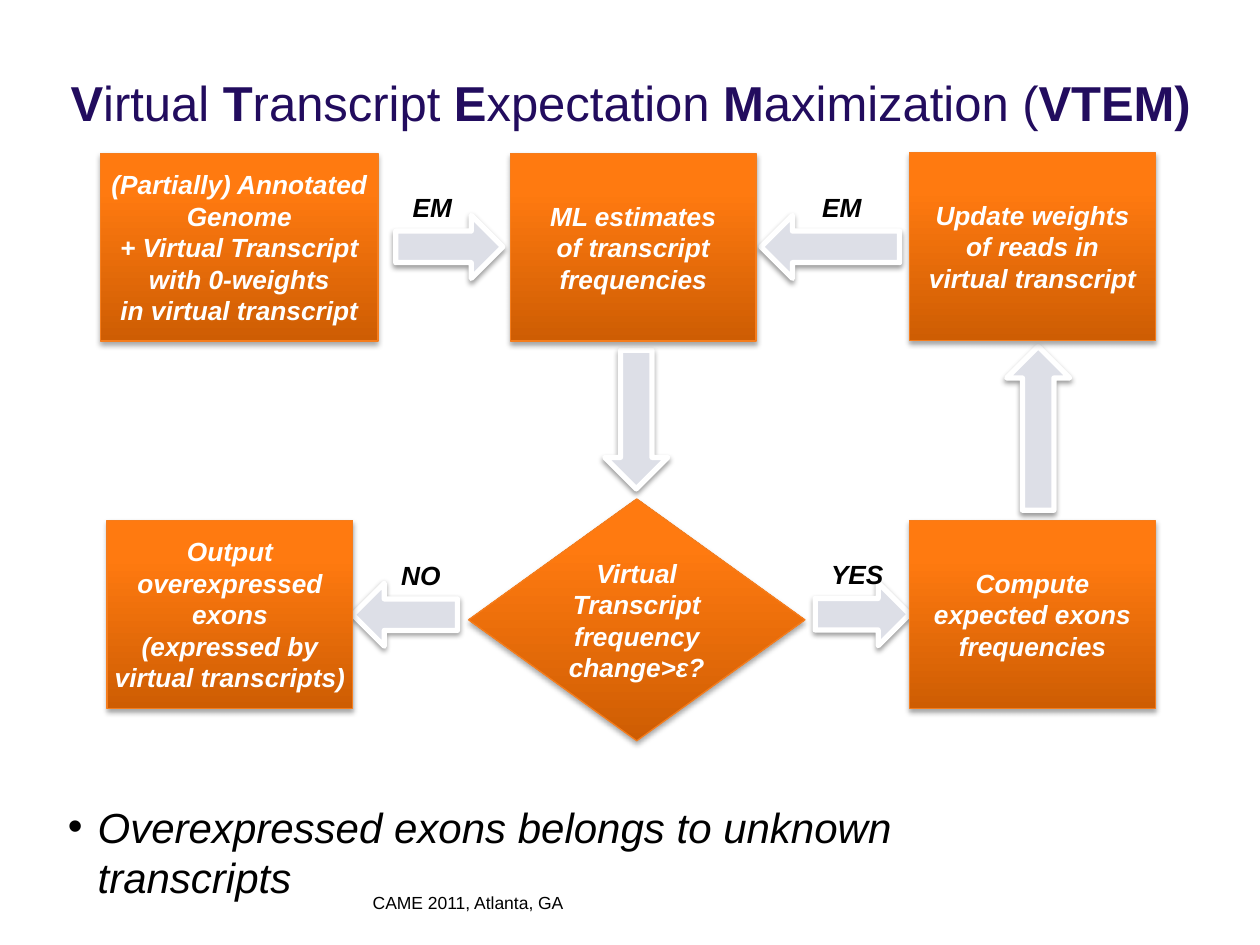
from lxml.etree import SubElement
from pptx import Presentation
from pptx.dml.color import RGBColor
from pptx.enum.shapes import MSO_SHAPE
from pptx.enum.text import MSO_ANCHOR, PP_ALIGN
from pptx.oxml.ns import qn
from pptx.util import Pt

COLORS = {
    "title": "220C5E", "text": "000000", "white": "FFFFFF",
    "dark": "CE5D03", "orange": "FF7A10", "edge": "F57D1D", "arrow": "DDDFE7",
}
FONT = "Arial"
TITLE_RUNS = [
    ("V", True), ("irtual ", False), ("T", True), ("ranscript ", False),
    ("E", True), ("xpectation", False), (" M", True),
    ("aximization (", False), ("VTEM)", True),
]
TOP_ROW, BOTTOM_ROW = 87.6, 297.4
BOX_WIDTH, BOX_HEIGHT = 140.4, 107.3
RIGHT_COLUMN = 519.8
BOXES = [
    (57.6, TOP_ROW, 158.4, ["(Partially) Annotated", "Genome", "+ Virtual Transcript",
                            "with 0-weights", "in virtual transcript"]),
    (291.6, TOP_ROW, BOX_WIDTH, ["ML estimates", "of transcript", "frequencies"]),
    (RIGHT_COLUMN, TOP_ROW - 0.5, BOX_WIDTH,
     ["Update weights", "of reads in", "virtual transcript"]),
    (61.2, BOTTOM_ROW, BOX_WIDTH, ["Output", "overexpressed", "exons",
                                   "(expressed by", "virtual transcripts)"]),
    (RIGHT_COLUMN, BOTTOM_ROW, BOX_WIDTH, ["Compute", "expected exons", "frequencies"]),
]
DECISION = (267.8, 285.1, 192.2, 138.2)
DECISION_TEXT = "Virtual Transcript frequency change>ε?"
ARROW_BREADTH = 36
ARROWS = [
    (MSO_SHAPE.RIGHT_ARROW, 226.1, 123.1, 61.2),
    (MSO_SHAPE.LEFT_ARROW, 434.9, 123.1, 79.2),
    (MSO_SHAPE.DOWN_ARROW, 345.6, 200.2, 79.2),
    (MSO_SHAPE.LEFT_ARROW, 201.6, 333.3, 59.8),
    (MSO_SHAPE.RIGHT_ARROW, 465.8, 333, 54),
    (MSO_SHAPE.UP_ARROW, 575.3, 198, 93.6),
]
LABELS = [
    ("EM", 226.1, 105.8, 41.8), ("EM", 460.1, 105.8, 41.8),
    ("NO", 219.6, 316.1, 41.8), ("YES", 465.8, 315.4, 48.2),
]
CONCLUSION = "Overexpressed exons belongs to unknown transcripts"
FOOTER = "CAME 2011, Atlanta, GA"


def color(name):
    return RGBColor.from_string(COLORS[name])


def add_run(paragraph, text, size, color_name, bold=False, italic=False):
    run = paragraph.add_run()
    run.text = text
    run.font.name = FONT
    run.font.size = Pt(size)
    run.font.bold = bold
    run.font.italic = italic
    run.font.color.rgb = color(color_name)


def write_lines(frame, lines, color_name):
    for index, line in enumerate(lines):
        paragraph = frame.add_paragraph() if index else frame.paragraphs[0]
        paragraph.alignment = PP_ALIGN.CENTER
        add_run(paragraph, line, 15, color_name, bold=True, italic=True)


def add_shadow(shape, distance, opacity):
    shape.shadow.inherit = False
    effects = shape._element.spPr.find(qn("a:effectLst"))
    shadow = SubElement(effects, qn("a:outerShdw"), blurRad=str(Pt(3.1)),
                        dist=str(Pt(distance)), dir="5400000", rotWithShape="0")
    shade = SubElement(shadow, qn("a:srgbClr"), val=COLORS["text"])
    SubElement(shade, qn("a:alpha"), val=str(opacity * 1000))


def add_shape(slide, kind, left, top, width, height):
    return slide.shapes.add_shape(kind, Pt(left), Pt(top), Pt(width), Pt(height))


def add_step(slide, kind, bounds, lines, wrap):
    shape = add_shape(slide, kind, *bounds)
    shape.fill.gradient()
    shape.fill.gradient_angle = 90
    for stop, name, position in zip(shape.fill.gradient_stops, ("dark", "orange"), (0, 0.8)):
        stop.color.rgb = color(name)
        stop.position = position
    shape.line.color.rgb = color("edge")
    shape.line.width = Pt(0.75)
    add_shadow(shape, 1.8, 35)
    frame = shape.text_frame
    frame.word_wrap = wrap
    frame.vertical_anchor = MSO_ANCHOR.MIDDLE
    write_lines(frame, lines, "white")


def add_arrow(slide, kind, left, top, length):
    vertical = kind in (MSO_SHAPE.UP_ARROW, MSO_SHAPE.DOWN_ARROW)
    size = (ARROW_BREADTH, length) if vertical else (length, ARROW_BREADTH)
    shape = add_shape(slide, kind, left, top, *size)
    shape.fill.solid()
    shape.fill.fore_color.rgb = color("arrow")
    shape.line.color.rgb = color("white")
    shape.line.width = Pt(3)
    add_shadow(shape, 1.6, 38)


def add_text_box(slide, left, top, width, height):
    frame = slide.shapes.add_textbox(Pt(left), Pt(top), Pt(width), Pt(height)).text_frame
    frame.word_wrap = True
    return frame


def add_title(slide):
    title = slide.shapes.title
    title.left, title.top, title.width, title.height = Pt(31.7), Pt(38.2), Pt(657.4), Pt(49)
    frame = title.text_frame
    frame.margin_left = frame.margin_right = frame.margin_bottom = 0
    frame.margin_top = Pt(3.4)
    frame.vertical_anchor = MSO_ANCHOR.TOP
    paragraph = frame.paragraphs[0]
    paragraph.alignment = PP_ALIGN.CENTER
    for text, bold in TITLE_RUNS:
        add_run(paragraph, text, 28, "title", bold=bold)


def main():
    presentation = Presentation()
    presentation.slide_width, presentation.slide_height = Pt(720), Pt(540)
    slide = presentation.slides.add_slide(presentation.slide_layouts[5])
    add_title(slide)
    for arrow in ARROWS:
        add_arrow(slide, *arrow)
    for left, top, width, lines in BOXES:
        add_step(slide, MSO_SHAPE.RECTANGLE, (left, top, width, BOX_HEIGHT), lines, False)
    add_step(slide, MSO_SHAPE.DIAMOND, DECISION, [DECISION_TEXT], True)
    for text, left, top, width in LABELS:
        write_lines(add_text_box(slide, left, top, width, 28.8), [text], "text")

    paragraph = add_text_box(slide, 31.7, 454.3, 600, 64).paragraphs[0]
    properties = paragraph._p.get_or_add_pPr()
    properties.set("marL", str(Pt(17)))
    properties.set("indent", str(-Pt(17)))
    SubElement(properties, qn("a:buFont"), typeface=FONT)
    SubElement(properties, qn("a:buChar"), char="•")
    add_run(paragraph, CONCLUSION, 24, "text", italic=True)

    footer = add_text_box(slide, 205.9, 506.2, 339.1, 33)
    add_run(footer.paragraphs[0], FOOTER, 10, "text")
    presentation.save("out.pptx")


if __name__ == "__main__":
    main()
